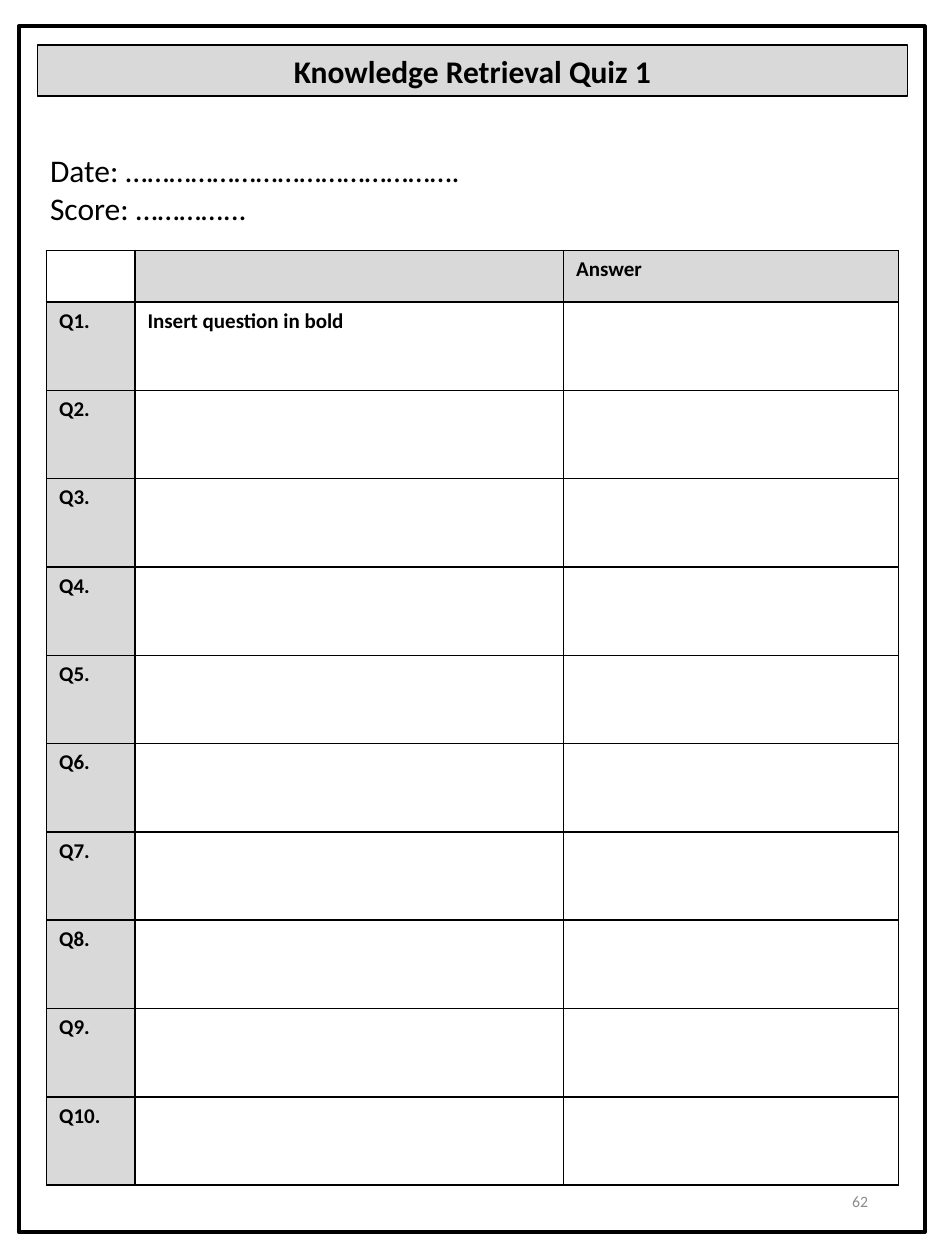
from pptx import Presentation
from pptx.dml.color import RGBColor
from pptx.enum.shapes import MSO_SHAPE
from pptx.enum.text import MSO_ANCHOR, PP_ALIGN
from pptx.oxml.ns import qn
from pptx.util import Cm, Pt
from lxml.etree import SubElement

BLACK = RGBColor(0x00, 0x00, 0x00)
LIGHT_GREY = RGBColor(0xD9, 0xD9, 0xD9)
PAGE_GREY = RGBColor(0x8C, 0x8C, 0x8C)


class QuizSheet:
    font = "Calibri"

    def __init__(self, slide):
        self.slide = slide

    def set_text(self, frame, text, size, color=BLACK, bold=False, align=PP_ALIGN.LEFT):
        frame.text = text
        for paragraph in frame.paragraphs:
            paragraph.alignment = align
            for run in paragraph.runs:
                run.font.name = self.font
                run.font.size = Pt(size)
                run.font.bold = bold
                run.font.color.rgb = color

    def paint(self, fill, color):
        if color is None:
            fill.background()
        else:
            fill.solid()
            fill.fore_color.rgb = color

    def box(self, left, top, width, height, line_width, fill=None):
        box = self.slide.shapes.add_shape(
            MSO_SHAPE.RECTANGLE, Cm(left), Cm(top), Cm(width), Cm(height))
        box.shadow.inherit = False
        self.paint(box.fill, fill)
        box.line.color.rgb = BLACK
        box.line.width = Pt(line_width)
        return box

    def label(self, left, top, width, height, text, size, anchor=MSO_ANCHOR.TOP, **style):
        label = self.slide.shapes.add_textbox(Cm(left), Cm(top), Cm(width), Cm(height))
        label.text_frame.word_wrap = True
        label.text_frame.vertical_anchor = anchor
        self.set_text(label.text_frame, text, size, **style)

    def border(self, cell):
        properties = cell._tc.get_or_add_tcPr()
        for position, side in enumerate(("a:lnL", "a:lnR", "a:lnT", "a:lnB")):
            line = properties.makeelement(qn(side), {"w": str(Pt(1))})
            color = SubElement(SubElement(line, qn("a:solidFill")), qn("a:srgbClr"))
            color.set("val", str(BLACK))
            properties.insert(position, line)

    def grid(self, left, top, widths, heights, rows, shaded):
        table = self.slide.shapes.add_table(
            len(heights), len(widths), Cm(left), Cm(top),
            Cm(sum(widths)), Cm(sum(heights))).table
        table.first_row = False
        table.horz_banding = False
        for column, width in zip(table.columns, widths):
            column.width = Cm(width)
        for row, height in zip(table.rows, heights):
            row.height = Cm(height)
        for r, texts in enumerate(rows):
            for c, text in enumerate(texts):
                cell = table.cell(r, c)
                self.set_text(cell.text_frame, text, 12, bold=True)
                self.paint(cell.fill, LIGHT_GREY if shaded(r, c) else None)
                self.border(cell)


def main():
    presentation = Presentation()
    presentation.slide_width = Cm(19.05)
    presentation.slide_height = Cm(25.4)
    sheet = QuizSheet(presentation.slides.add_slide(presentation.slide_layouts[6]))

    sheet.box(0.38, 0.53, 18.26, 24.31, 2.25)
    title = sheet.box(0.76, 0.91, 17.53, 1.03, 0.75, LIGHT_GREY)
    sheet.set_text(title.text_frame, "Knowledge Retrieval Quiz 1", 18,
                   bold=True, align=PP_ALIGN.CENTER)
    sheet.label(0.76, 2.92, 13.08, 1.8,
                "Date: ……………………………………….\nScore: …………...", 18)

    question_count = 10
    rows = [("", "", "Answer")]
    for number in range(1, question_count + 1):
        question = "Insert question in bold" if number == 1 else ""
        rows.append((f"Q{number}.", question, ""))
    sheet.grid(0.94, 5.05, [1.78, 8.64, 6.75], [1.04] + [1.78] * question_count,
               rows, lambda r, c: (r == 0) != (c == 0))

    sheet.label(13.46, 23.55, 4.29, 1.35, "62", 9, MSO_ANCHOR.MIDDLE,
                color=PAGE_GREY, align=PP_ALIGN.RIGHT)
    presentation.save("out.pptx")


if __name__ == "__main__":
    main()
